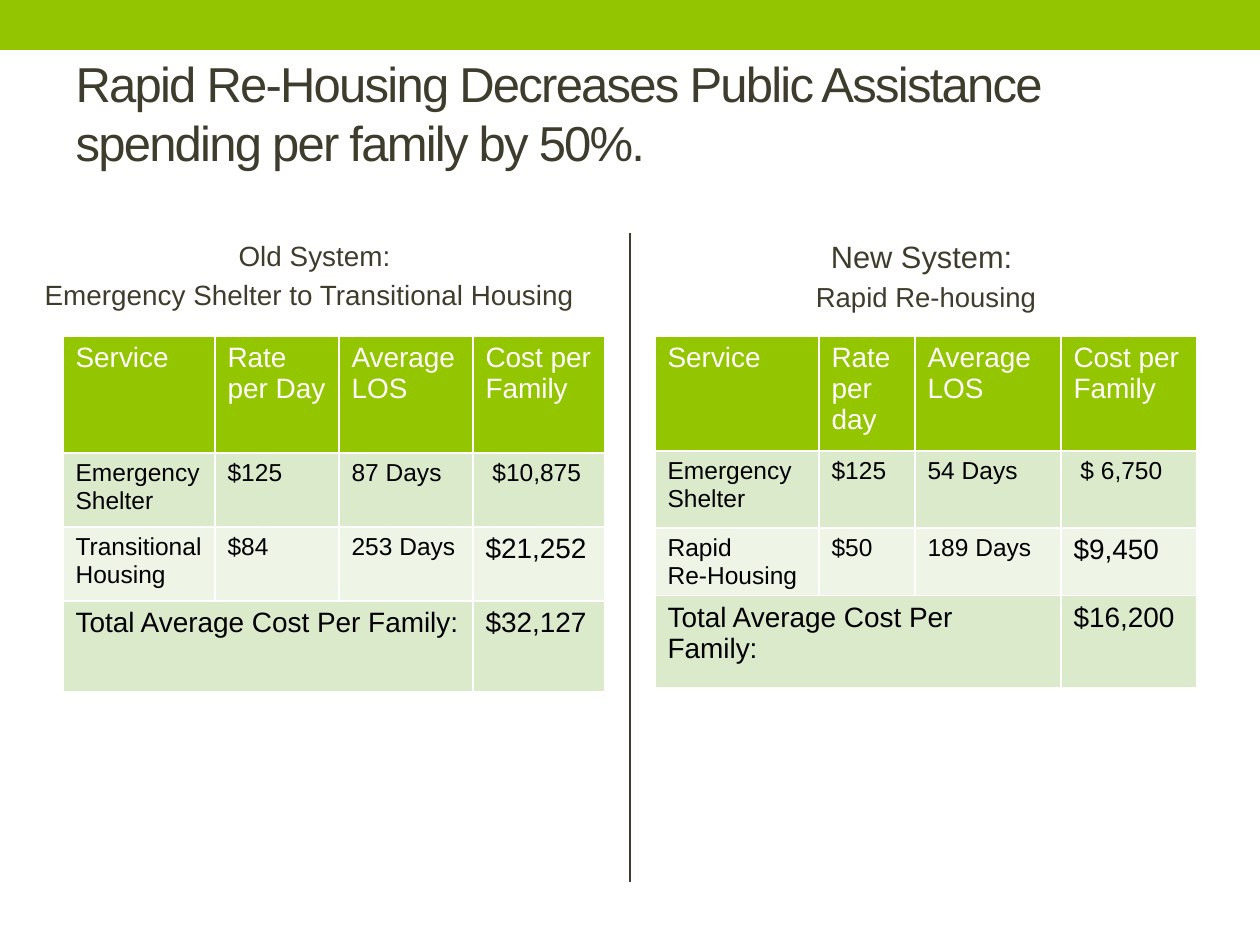
from lxml.etree import SubElement
from pptx import Presentation
from pptx.dml.color import RGBColor
from pptx.enum.shapes import MSO_CONNECTOR, MSO_SHAPE
from pptx.enum.text import MSO_ANCHOR, MSO_AUTO_SIZE, PP_ALIGN
from pptx.oxml.ns import qn
from pptx.util import Emu, Pt

GREEN = RGBColor(0x94, 0xC6, 0x00)
DARK = RGBColor(0x3E, 0x3D, 0x2D)
BAND = RGBColor(0xDC, 0xEA, 0xCC)
PALE = RGBColor(0xEE, 0xF5, 0xE7)
WHITE = RGBColor(0xFF, 0xFF, 0xFF)
BLACK = RGBColor(0x00, 0x00, 0x00)


def px(n):
    return Emu(round(n * 914400 / 126))


def add_run(p, text, size, color):
    r = p.add_run()
    r.text = text
    r.font.name = "Arial"
    r.font.size = Pt(size)
    r.font.bold = False
    r.font.color.rgb = color
    return r


prs = Presentation()
prs.slide_width, prs.slide_height = px(1260), px(945)
slide = prs.slides.add_slide(prs.slide_layouts[4])
holders = {sp.placeholder_format.idx: sp for sp in slide.placeholders}
for idx in (2, 4, 10, 11, 12):
    if idx in holders:
        el = holders[idx].element
        el.getparent().remove(el)

# Top bar
bar = slide.shapes.add_shape(MSO_SHAPE.RECTANGLE, 0, 0, px(1260), px(50))
bar.shadow.inherit = False
bar.fill.solid()
bar.fill.fore_color.rgb = GREEN
bar.line.fill.background()

# Divider between the two systems
divider = slide.shapes.add_connector(MSO_CONNECTOR.STRAIGHT, px(630), px(233), px(630), px(882))
divider.line.color.rgb = DARK
divider.line.width = Pt(1.5)
SubElement(divider.element.spPr, qn("a:effectLst"))

# Title, raised above the middle of its box by the bottom inset
title = holders[0]
title.left, title.top, title.width, title.height = px(63), px(73), px(1134), px(136)
tf = title.text_frame
tf.word_wrap = True
tf.auto_size = MSO_AUTO_SIZE.NONE
tf.vertical_anchor = MSO_ANCHOR.MIDDLE
tf.margin_bottom = px(64)
p = tf.paragraphs[0]
p.alignment = PP_ALIGN.LEFT
r = add_run(p, "Rapid Re-Housing Decreases Public Assistance spending per family by 50%.", 28, DARK)
r.font._element.set("spc", "-100")

# Each system: heading lines as (text, size) runs, then its cost table
systems = [
    dict(
        idx=1, head=(32, 573), left=63,
        lines=[[("Old System: ", 15.9)],
               [("Emergency Shelter to Transitional Housing", 15.9), ("\t", 8.4)]],
        cols=[152, 124, 134, 132], rows=[117, 74, 74, 91],
        cells=[["Service", "Rate per Day", "Average\nLOS", "Cost per Family"],
               ["Emergency Shelter", "$125", "87 Days", " $10,875"],
               ["Transitional Housing", "$84", "253 Days", "$21,252"],
               ["Total Average Cost Per Family:", "", "", "$32,127"]]),
    dict(
        idx=3, head=(655, 542), left=655,
        lines=[[("New System: ", 17.6)], [("Rapid Re-housing", 15.7)]],
        cols=[164, 96, 146, 136], rows=[115, 77, 67, 92],
        cells=[["Service", "Rate per day", "Average\nLOS", "Cost per Family"],
               ["Emergency Shelter", "$125", "54 Days", " $ 6,750"],
               ["Rapid\nRe-Housing", "$50", "189 Days", "$9,450"],
               ["Total Average Cost Per Family:", "", "", "$16,200"]]),
]
row_fills = [GREEN, BAND, PALE, BAND]

for system in systems:
    # Heading
    sp = holders[system["idx"]]
    left, width = system["head"]
    sp.left, sp.top, sp.width, sp.height = px(left), px(231), px(width), px(88)
    tf = sp.text_frame
    tf.word_wrap = True
    tf.auto_size = MSO_AUTO_SIZE.NONE
    tf.vertical_anchor = MSO_ANCHOR.MIDDLE
    for i, line in enumerate(system["lines"]):
        p = tf.add_paragraph() if i else tf.paragraphs[0]
        p.alignment = PP_ALIGN.CENTER
        p.space_before = Pt(3.2)
        for text, size in line:
            add_run(p, text, size, DARK)

    # Table grid
    cols, rows = system["cols"], system["rows"]
    table = slide.shapes.add_table(4, 4, px(system["left"]), px(336),
                                   px(sum(cols)), px(sum(rows))).table
    table.horz_banding = False
    for col, w in zip(table.columns, cols):
        col.width = px(w)
    for row, h in zip(table.rows, rows):
        row.height = px(h)
    table.cell(3, 0).merge(table.cell(3, 2))

    # Cells
    for i, values in enumerate(system["cells"]):
        for j, value in enumerate(values):
            cell = table.cell(i, j)
            tcPr = cell._tc.get_or_add_tcPr()
            for side in ("a:lnL", "a:lnR", "a:lnT", "a:lnB"):
                ln = SubElement(tcPr, qn(side), w=str(Pt(1)))
                SubElement(SubElement(ln, qn("a:solidFill")), qn("a:srgbClr"), val=str(WHITE))
            cell.fill.solid()
            cell.fill.fore_color.rgb = row_fills[i]
            if not value:
                continue
            small = i == 1 or (i == 2 and j < 3)
            for k, text in enumerate(value.split("\n")):
                p = cell.text_frame.add_paragraph() if k else cell.text_frame.paragraphs[0]
                add_run(p, text, 14 if small else 16, BLACK if i else WHITE)

prs.save("out.pptx")
